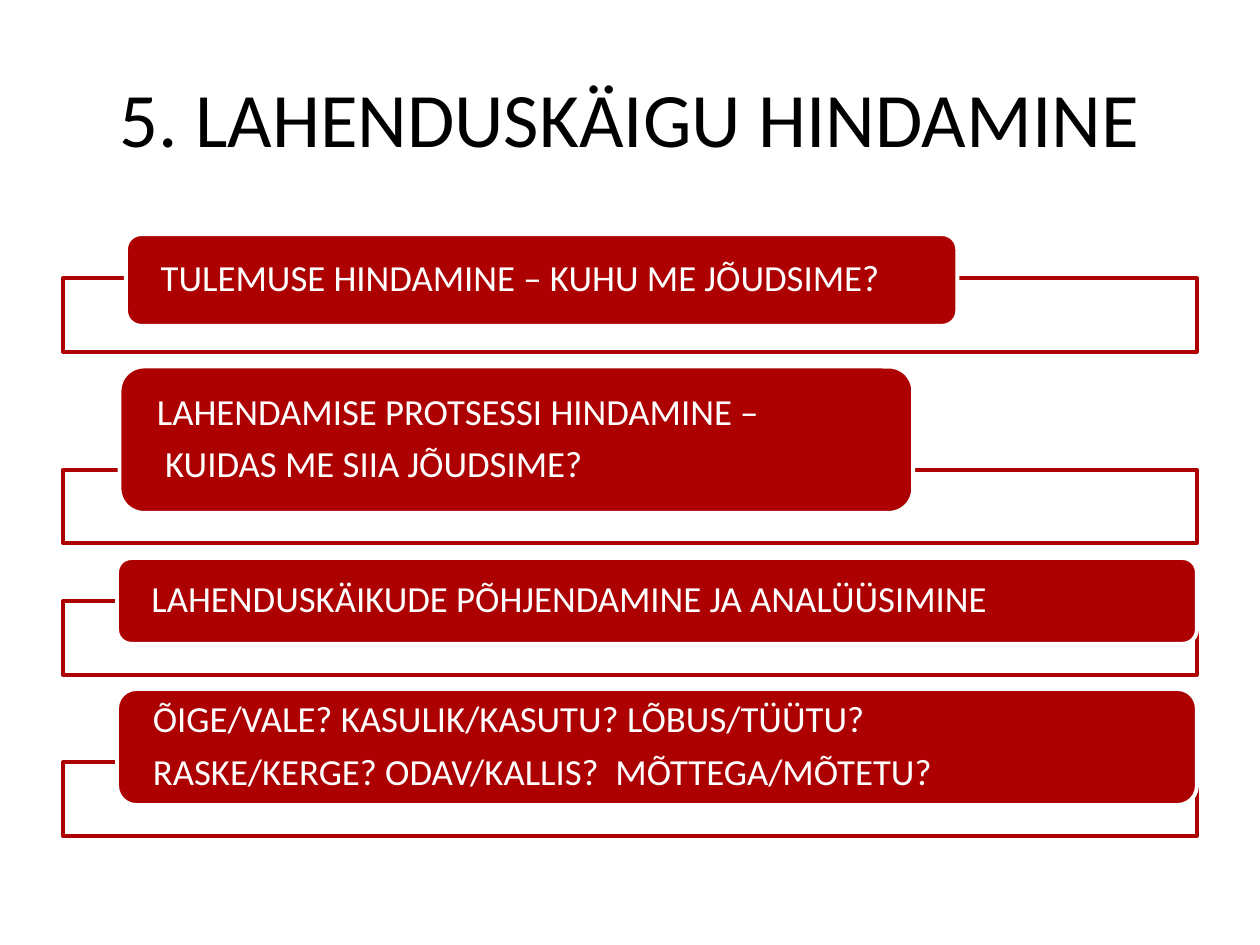
from lxml.etree import SubElement
from pptx import Presentation
from pptx.dml.color import RGBColor
from pptx.enum.shapes import MSO_SHAPE
from pptx.enum.text import MSO_ANCHOR, PP_ALIGN
from pptx.oxml.ns import qn
from pptx.util import Cm, Pt

COLORS = {"red": "AD0101", "white": "FFFFFF", "black": "000000"}


def write(shape, text, size=21, color="white", align=PP_ALIGN.LEFT,
          inset=0.61, after=7.35, spacing=0.9):
    frame = shape.text_frame
    frame.word_wrap = True
    frame.vertical_anchor = MSO_ANCHOR.MIDDLE
    frame.margin_left = frame.margin_right = Cm(inset)
    frame.margin_top = frame.margin_bottom = 0
    frame.text = text
    for para in frame.paragraphs:
        para.alignment = align
        para.line_spacing = spacing
        para.space_after = Pt(after)
        font = para.runs[0].font
        font.name = "Calibri"
        font.size = Pt(size)
        font.color.rgb = RGBColor.from_string(COLORS[color])


def draw(kind, place, fill, line):
    shape = slide.shapes.add_shape(kind, *map(Cm, place))
    shape.shadow.inherit = False
    shape.fill.solid()
    shape.fill.fore_color.rgb = RGBColor.from_string(COLORS[fill])
    shape.line.color.rgb = RGBColor.from_string(COLORS[line])
    shape.line.width = Pt(2.25)
    return shape


deck = Presentation()
deck.slide_width, deck.slide_height = Cm(25.4), Cm(19.05)
slide = deck.slides.add_slide(deck.slide_layouts[6])

title = slide.shapes.add_textbox(Cm(1.27), Cm(0.76), Cm(22.86), Cm(3.18))
write(title, "5. LAHENDUSKÄIGU HINDAMINE", size=44, color="black",
      align=PP_ALIGN.CENTER, inset=0.25, after=0, spacing=1.0)

items = [
    (5.61, (2.54, 4.72, 16.76, 1.85), "TULEMUSE HINDAMINE – KUHU ME JÕUDSIME?"),
    (9.47, (2.41, 7.39, 16, 2.95),
     "LAHENDAMISE PROTSESSI HINDAMINE –\n KUIDAS ME SIIA JÕUDSIME?"),
    (12.12, (2.36, 11.25, 21.77, 1.73),
     "LAHENDUSKÄIKUDE PÕHJENDAMINE JA ANALÜÜSIMINE"),
    (15.37, (2.36, 13.89, 21.77, 2.34),
     "ÕIGE/VALE? KASULIK/KASUTU? LÕBUS/TÜÜTU?\n"
     "RASKE/KERGE? ODAV/KALLIS?  MÕTTEGA/MÕTETU?"),
]
for top, place, text in items:
    frame = draw(MSO_SHAPE.RECTANGLE, (1.27, top, 22.86, 1.48), "white", "red")
    tint = frame.fill._xPr.find(qn("a:solidFill"))[0]
    SubElement(tint, qn("a:alpha"), val="90000")
    label = draw(MSO_SHAPE.ROUNDED_RECTANGLE, place, "red", "white")
    write(label, text)

deck.save("out.pptx")
